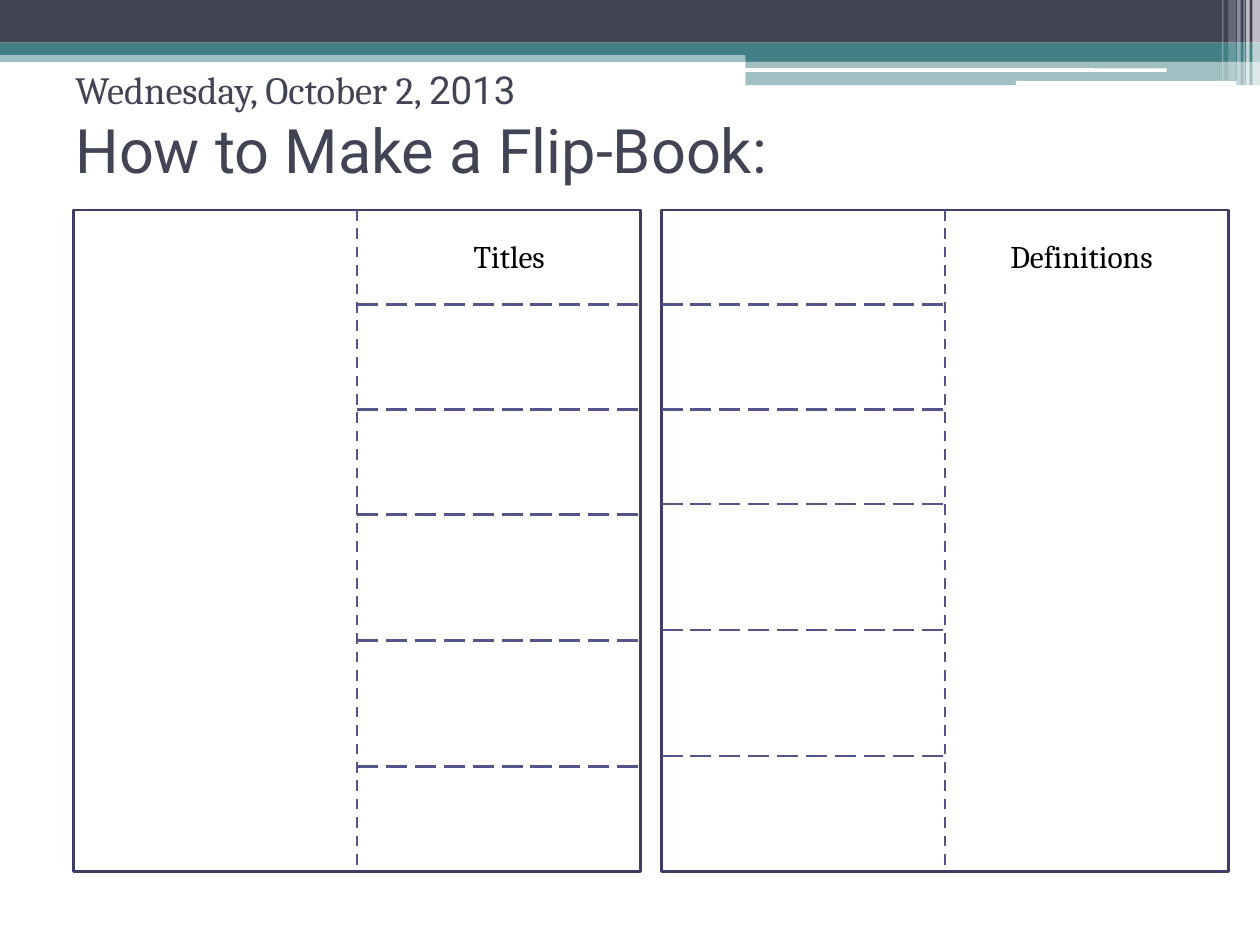
import pptx
import pptx.util
import pptx.dml.color
import pptx.enum.dml
import pptx.enum.shapes
import pptx.enum.text
import pptx.oxml.ns
from lxml import etree

Pt = pptx.util.Pt
RGBColor = pptx.dml.color.RGBColor
MSO_SHAPE = pptx.enum.shapes.MSO_SHAPE
DASH = pptx.enum.dml.MSO_LINE
ALIGN = pptx.enum.text.PP_ALIGN
ANCHOR = pptx.enum.text.MSO_ANCHOR
qn = pptx.oxml.ns.qn

NAVY = RGBColor(0x42, 0x44, 0x56)
TEAL = RGBColor(0x43, 0x80, 0x86)
WHITE = RGBColor(0xFF, 0xFF, 0xFF)
BLACK = RGBColor(0x00, 0x00, 0x00)
BORDER = RGBColor(0x3D, 0x3E, 0x66)
FOLD = RGBColor(0x53, 0x54, 0x8A)


def add_box(s, x, y, w, h, fill, alpha=100, kind=MSO_SHAPE.RECTANGLE):
    sp = s.shapes.add_shape(kind, Pt(x), Pt(y), Pt(w), Pt(h))
    sp.shadow.inherit = False
    sp.fill.solid()
    sp.fill.fore_color.rgb = fill
    sp.line.fill.background()
    if alpha < 100:
        color = sp.fill._xPr.find(qn("a:solidFill"))[0]
        etree.SubElement(color, qn("a:alpha")).set("val", str(alpha * 1000))
    return sp


def add_dashes(s, x1, y1, x2, y2, dash):
    line = s.shapes.add_connector(pptx.enum.shapes.MSO_CONNECTOR.STRAIGHT,
                                  Pt(x1), Pt(y1), Pt(x2), Pt(y2))
    line.line.color.rgb = FOLD
    line.line.width = Pt(1.5)
    line.line.dash_style = dash
    etree.SubElement(line._element.spPr, qn("a:effectLst"))


def add_text_frame(s, x, y, w, h):
    tf = s.shapes.add_textbox(Pt(x), Pt(y), Pt(w), Pt(h)).text_frame
    tf.word_wrap = True
    return tf


def add_run(p, text, size, font, color):
    r = p.add_run()
    r.text = text
    r.font.size = Pt(size)
    r.font.name = font
    r.font.color.rgb = color


def add_banner(s, x, y, w):
    # Bands across the top
    step = x + 426
    add_box(s, x, y + 28.8, w, 6.6, TEAL, 50)
    add_box(s, x, y, w, 24.4, NAVY)
    add_box(s, x, y + 24.4, w, 7, TEAL)
    add_box(s, step, y + 28, w - 426, 7.2, TEAL)
    add_box(s, step, y + 34.8, w - 426, 13.8, TEAL, 50)
    # White rules
    for left, top, width, height in ((425.5, 39, 241.2, 2), (580.5, 46.2, 126, 2.6)):
        add_box(s, x + left, y + top, width, height, WHITE,
                kind=MSO_SHAPE.ROUNDED_RECTANGLE)
    # Translucent stripes at the right end
    stripes = ((715.7, 4.3, 48.8, 65), (712.1, 2, 48.8, 65), (710.6, 0.7, 48.8, 60),
               (707, 2, 48.8, 40), (702, 4.3, 46, 20), (698.4, 0.7, 46, 30))
    for left, width, height, alpha in stripes:
        add_box(s, x + left, y, width, height, WHITE, alpha)


def add_title(s, x, y, w, h):
    tf = add_text_frame(s, x, y, w, h)
    tf.vertical_anchor = ANCHOR.MIDDLE
    p = tf.paragraphs[0]
    add_run(p, "Wednesday, October 2, ", 22, "Cambria", NAVY)
    add_run(p, "2013", 22, "Roboto", NAVY)
    p.add_line_break()
    add_run(p, "How to Make a Flip-Book:", 35, "Roboto", NAVY)


def add_page(s, x, y, w, h, flap_x, cuts, label, label_x, label_w):
    # Sheet with a fold down the middle
    sheet = add_box(s, x, y, w, h, WHITE)
    sheet.line.color.rgb = BORDER
    sheet.line.width = Pt(1.5)
    add_dashes(s, x + w / 2, y, x + w / 2, y + h, DASH.DASH)
    # Cuts between the flaps
    for cut in cuts:
        add_dashes(s, flap_x, y + cut, flap_x + w / 2, y + cut, DASH.LONG_DASH)
    # Label
    p = add_text_frame(s, label_x, y + 12, label_w, 29).paragraphs[0]
    p.alignment = ALIGN.CENTER
    add_run(p, label, 18, "Cambria", BLACK)


def main():
    prs = pptx.Presentation()
    prs.slide_width, prs.slide_height = Pt(720), Pt(540)
    s = prs.slides.add_slide(prs.slide_layouts[6])
    add_banner(s, 0, 0, 720)
    add_title(s, 36, 30, 648, 84)
    add_page(s, 42, 120, 324, 378, 204, (54, 114, 174, 246, 318), "Titles", 234, 114)
    add_page(s, 378, 120, 324, 378, 378, (54, 114, 168, 240, 312), "Definitions", 540, 156)
    prs.save("out.pptx")


if __name__ == "__main__":
    main()
